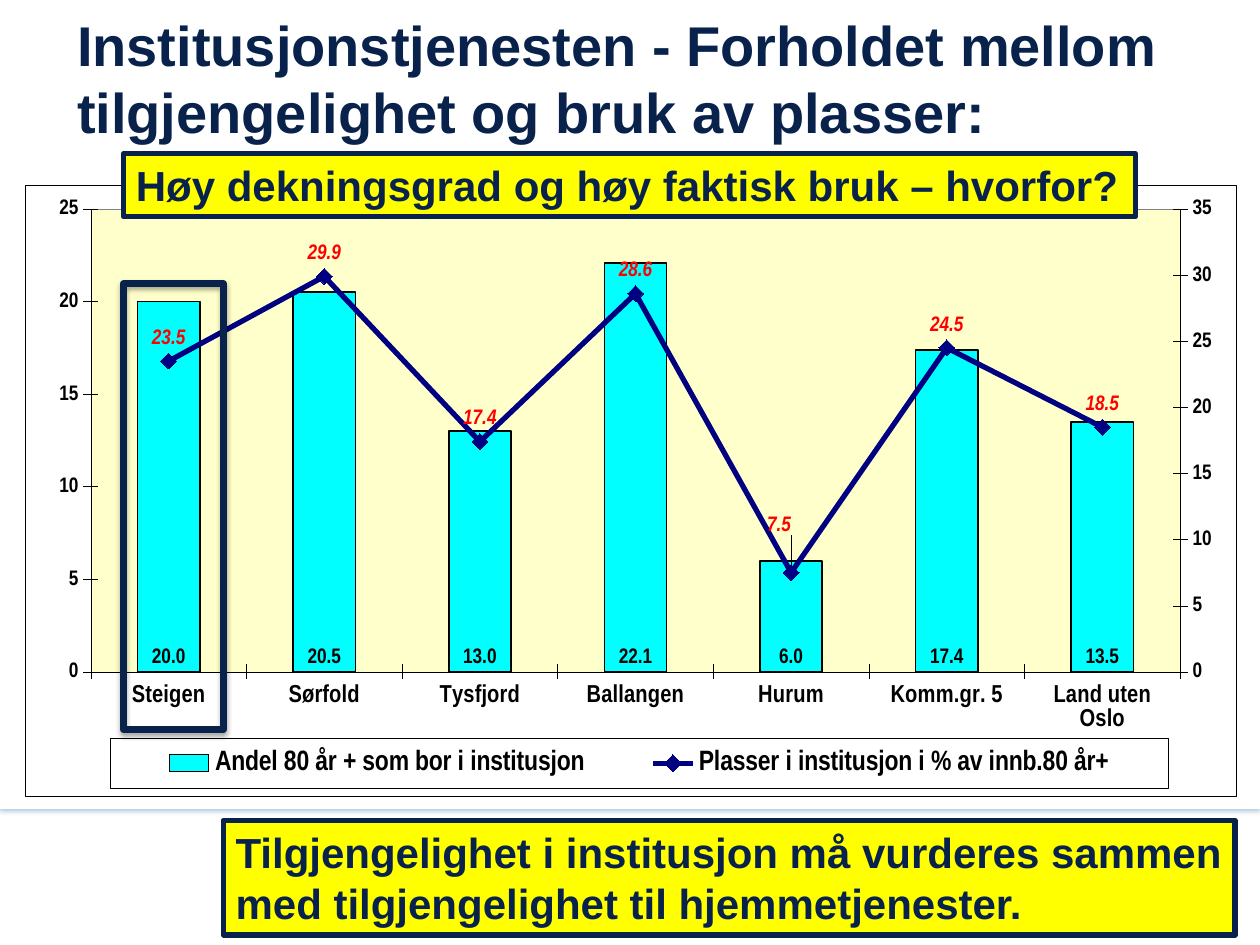
from copy import deepcopy

from pptx import Presentation
from pptx.chart.data import CategoryChartData
from pptx.dml.color import RGBColor
from pptx.enum.chart import (XL_CHART_TYPE, XL_LABEL_POSITION, XL_LEGEND_POSITION,
                             XL_MARKER_STYLE, XL_TICK_MARK)
from pptx.enum.shapes import MSO_SHAPE
from pptx.enum.text import MSO_ANCHOR, MSO_AUTO_SIZE, PP_ALIGN
from pptx.oxml import parse_xml
from pptx.oxml.ns import nsdecls, qn
from pptx.util import Cm, Pt

NAVY = RGBColor(0x09, 0x22, 0x4B)
BLUE = RGBColor(0x00, 0x51, 0x93)
WHITE = RGBColor(0xFF, 0xFF, 0xFF)
BLACK = RGBColor(0x00, 0x00, 0x00)
YELLOW = RGBColor(0xFF, 0xFF, 0x00)
CREAM = RGBColor(0xFF, 0xFF, 0xCC)
GREY = RGBColor(0x80, 0x80, 0x80)
CYAN = RGBColor(0x00, 0xFF, 0xFF)
DARK_BLUE = RGBColor(0x00, 0x00, 0x80)
RED = RGBColor(0xFF, 0x00, 0x00)

MUNICIPALITIES = ["Steigen", "Sørfold", "Tysfjord", "Ballangen", "Hurum",
                  "Komm.gr. 5", "Land uten Oslo"]
RESIDENTS = ("Andel 80 år + som bor i institusjon",
             [20, 20.5, 13, 22.1, 6, 17.4, 13.5])
PLACES = ("Plasser i institusjon i % av innb.80 år+",
          [23.5, 29.9, 17.4, 28.6, 7.5, 24.5, 18.5])
HURUM = MUNICIPALITIES.index("Hurum")


def set_font(font, size, color, name="Arial Narrow", italic=None):
    font.size, font.bold, font.name = Pt(size), True, name
    font.color.rgb = color
    if italic is not None:
        font.italic = italic


def add_box(slide, left, top, width, height, fill=None, line_width=None):
    box = slide.shapes.add_shape(MSO_SHAPE.RECTANGLE, Cm(left), Cm(top), Cm(width), Cm(height))
    box.shadow.inherit = False
    if fill is None:
        box.fill.background()
    else:
        box.fill.solid()
        box.fill.fore_color.rgb = fill
    if line_width is None:
        box.line.fill.background()
    else:
        box.line.color.rgb = NAVY
        box.line.width = Pt(line_width)
    return box


def add_shadow(box, color):
    effects = box._element.spPr.find(qn("a:effectLst"))
    effects.append(parse_xml(
        f'<a:outerShdw {nsdecls("a")} blurRad="40000" dist="23000" dir="5400000" '
        f'rotWithShape="0"><a:srgbClr val="{color}"><a:alpha val="35000"/></a:srgbClr>'
        '</a:outerShdw>'))


def add_banner(slide, text, left, top, width, height):
    banner = add_box(slide, left, top, width, height, YELLOW, 3)
    frame = banner.text_frame
    frame.word_wrap = True
    frame.auto_size = MSO_AUTO_SIZE.SHAPE_TO_FIT_TEXT
    frame.vertical_anchor = MSO_ANCHOR.TOP
    frame.text = text
    frame.paragraphs[0].alignment = PP_ALIGN.LEFT
    set_font(frame.paragraphs[0].runs[0].font, 24, NAVY, "Arial")


def set_title(slide, text):
    title = slide.shapes.title
    title.left, title.top, title.width, title.height = Cm(1.3), Cm(0), Cm(22.86), Cm(3.12)
    frame = title.text_frame
    frame.auto_size = MSO_AUTO_SIZE.NONE
    frame.vertical_anchor = MSO_ANCHOR.MIDDLE
    frame.text = text
    frame.paragraphs[0].alignment = PP_ALIGN.LEFT
    set_font(frame.paragraphs[0].runs[0].font, 32, NAVY, "Arial")


# Chart parts
def layout_xml(inner=False, **places):
    target = '<c:layoutTarget val="inner"/>' if inner else ""
    modes = "".join(f'<c:{key}Mode val="edge"/>' for key in "xy") if "w" in places else ""
    values = "".join(f'<c:{key} val="{value}"/>' for key, value in places.items())
    return parse_xml(f'<c:layout {nsdecls("c")}><c:manualLayout>{target}{modes}{values}'
                     '</c:manualLayout></c:layout>')


def area_xml(fill, line):
    return parse_xml(
        f'<c:spPr {nsdecls("c", "a")}><a:solidFill><a:srgbClr val="{fill}"/></a:solidFill>'
        f'<a:ln w="3175"><a:solidFill><a:srgbClr val="{line}"/></a:solidFill></a:ln></c:spPr>')


def format_axis(axis, size):
    axis.major_tick_mark = XL_TICK_MARK.CROSS
    axis.has_major_gridlines = False
    axis.format.line.color.rgb = BLACK
    axis.format.line.width = Pt(0.25)
    set_font(axis.tick_labels.font, size, BLACK)


def format_labels(labels, position, color, italic):
    labels.show_value = True
    labels.number_format, labels.number_format_is_linked = "0.0", False
    labels.position = position
    set_font(labels.font, 12, color, italic=italic)


def set_val(parent, tag, value):
    parent.find(qn(tag)).set("val", value)


def remove_all(parent, tag):
    for child in parent.findall(qn(tag)):
        parent.remove(child)


def move_to_right_axis(plot_area):
    """Turn the second column series into a line on its own value axis."""
    bars = plot_area.find(qn("c:barChart"))
    series = bars.findall(qn("c:ser"))[1]
    remove_all(series, "c:invertIfNegative")
    line_chart = parse_xml(
        f'<c:lineChart {nsdecls("c")}><c:grouping val="standard"/><c:varyColors val="0"/>'
        '<c:marker val="1"/><c:axId val="5001"/><c:axId val="5002"/></c:lineChart>')
    line_chart.insert(2, series)
    bars.addnext(line_chart)

    left_axis, base_axis = plot_area.find(qn("c:valAx")), plot_area.find(qn("c:catAx"))
    right_axis, hidden_axis = deepcopy(left_axis), deepcopy(base_axis)
    for axis, own, other in ((right_axis, "5002", "5001"), (hidden_axis, "5001", "5002")):
        set_val(axis, "c:axId", own)
        set_val(axis, "c:crossAx", other)
    set_val(hidden_axis, "c:delete", "1")
    set_val(right_axis, "c:axPos", "r")
    set_val(right_axis, "c:crosses", "max")
    set_val(right_axis.find(qn("c:scaling")), "c:max", "35")
    left_axis.addnext(right_axis)
    right_axis.addnext(hidden_axis)
    hidden_axis.addnext(area_xml(CREAM, GREY))


def format_residents(plot):
    plot.gap_width = 150
    plot.vary_by_categories = False
    residents = plot.series[0]
    residents.format.fill.solid()
    residents.format.fill.fore_color.rgb = CYAN
    residents.format.line.color.rgb = BLACK
    residents.format.line.width = Pt(1)
    format_labels(residents.data_labels, XL_LABEL_POSITION.INSIDE_BASE, BLACK, False)


def format_places(plot):
    places = plot.series[0]
    places.smooth = False
    places.format.line.color.rgb = DARK_BLUE
    places.format.line.width = Pt(3)
    places.marker.style, places.marker.size = XL_MARKER_STYLE.DIAMOND, 9
    places.marker.format.fill.solid()
    places.marker.format.fill.fore_color.rgb = RED
    places.marker.format.line.color.rgb = DARK_BLUE
    format_labels(places.data_labels, XL_LABEL_POSITION.ABOVE, RED, True)
    # The label of Hurum stands clear of the line
    hurum_label = places.points[HURUM].data_label
    set_font(hurum_label.font, 12, RED, italic=True)
    hurum_label.position = XL_LABEL_POSITION.ABOVE
    index = places._element.find(".//" + qn("c:dLbl")).find(qn("c:idx"))
    index.addnext(layout_xml(x=-0.01, y=-0.04))


def add_coverage_chart(slide):
    data = CategoryChartData(number_format="0.0")
    data.categories = MUNICIPALITIES
    for name, values in (RESIDENTS, PLACES):
        data.add_series(name, values)
    chart = slide.shapes.add_chart(XL_CHART_TYPE.COLUMN_CLUSTERED, Cm(0.51), Cm(3.73),
                                   Cm(24.41), Cm(12.32), data).chart
    chart.has_title = False
    set_font(chart.font, 10, BLACK)

    format_axis(chart.category_axis, 14)
    left_axis = chart.value_axis
    format_axis(left_axis, 12)
    left_axis.minimum_scale, left_axis.maximum_scale, left_axis.major_unit = 0, 25, 5
    left_axis.tick_labels.number_format = "0"
    left_axis.tick_labels.number_format_is_linked = False

    chart_part = chart._chartSpace.find(qn("c:chart"))
    chart_part.addnext(area_xml(WHITE, BLACK))
    plot_area = chart_part.find(qn("c:plotArea"))
    remove_all(plot_area, "c:layout")
    plot_area.insert(0, layout_xml(True, x=0.054, y=0.039, w=0.9, h=0.758))
    move_to_right_axis(plot_area)
    columns, line = chart.plots
    format_residents(columns)
    format_places(line)

    # Framed legend below the plot
    chart.has_legend = True
    legend = chart.legend
    legend.position = XL_LEGEND_POSITION.RIGHT
    legend.include_in_layout = False
    set_font(legend.font, 16, BLACK)
    frame = legend._element
    remove_all(frame, "c:layout")
    frame.get_or_add_legendPos().addnext(layout_xml(x=0.07, y=0.905, w=0.874, h=0.083))
    frame.get_or_add_overlay().addnext(area_xml(WHITE, BLACK))


def main():
    deck = Presentation()
    deck.slide_width, deck.slide_height = Cm(25.4), Cm(19.05)
    slide = deck.slides.add_slide(deck.slide_layouts[5])

    # White panel behind the title and chart
    panel = add_box(slide, 0, 0, 25.4, 16.31, WHITE)
    add_shadow(panel, BLUE)
    slide.shapes.title._element.addprevious(panel._element)

    set_title(slide, "Institusjonstjenesten - Forholdet mellom tilgjengelighet og bruk av plasser:")
    add_coverage_chart(slide)

    # Frame around Steigen
    add_shadow(add_box(slide, 2.49, 5.72, 2.01, 8.99, line_width=4), BLACK)

    add_banner(slide, "Tilgjengelighet i institusjon må vurderes sammen med tilgjengelighet "
               "til hjemmetjenester.", 4.5, 16.54, 20.4, 2.31)
    add_banner(slide, "Høy dekningsgrad og høy faktisk bruk – hvorfor?", 2.49, 3.1, 20.4, 1.27)
    deck.save("out.pptx")


if __name__ == "__main__":
    main()
